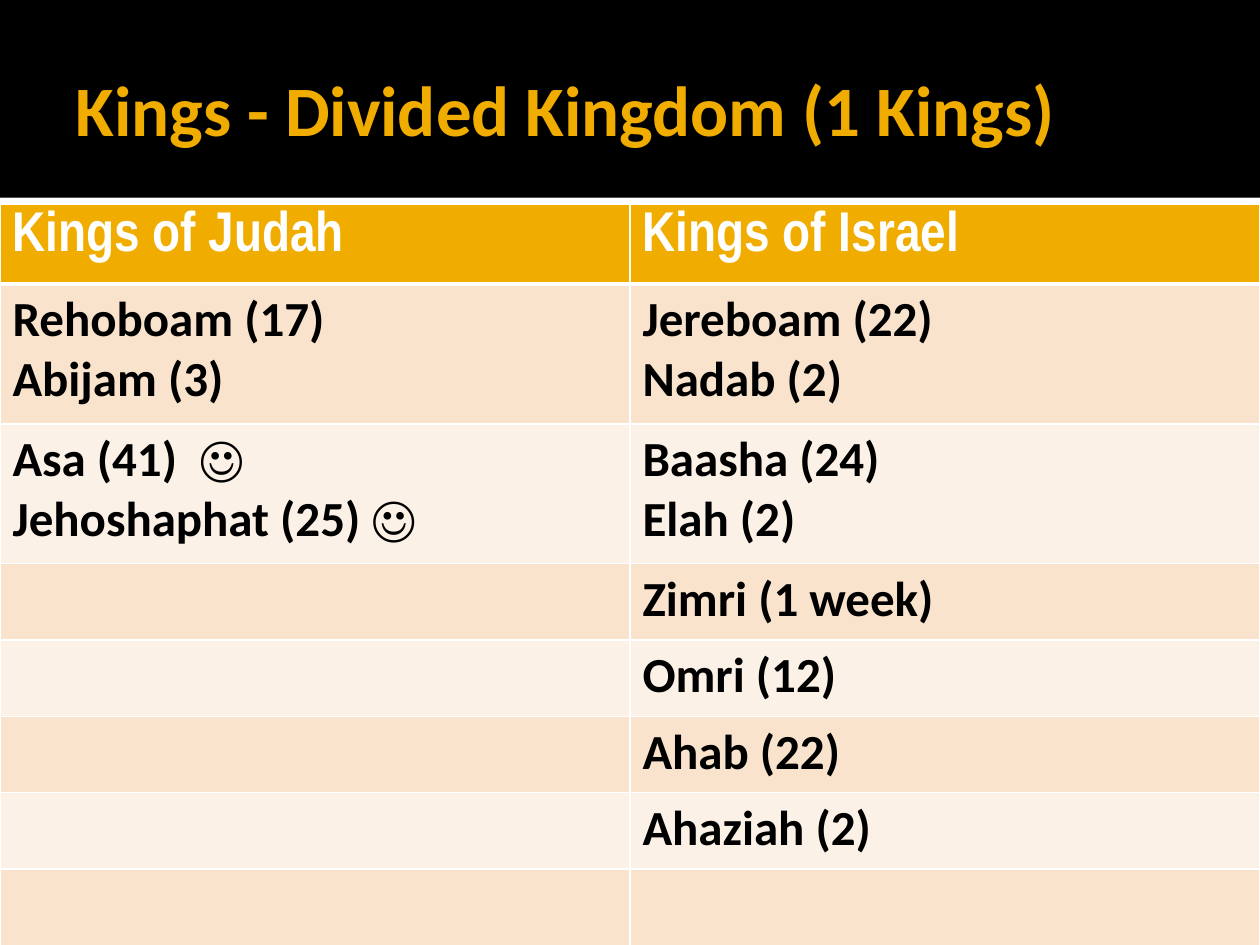
from dataclasses import dataclass

import pptx
import pptx.dml.color
import pptx.enum.shapes
import pptx.enum.text
import pptx.oxml
import pptx.oxml.ns
import pptx.util
from pptx.util import Inches


@dataclass(frozen=True)
class Theme:
    gold: str = "F0AD00"
    black: str = "000000"
    white: str = "FFFFFF"
    bands: tuple[str, str] = ("F9E3CC", "FCF1E7")
    body_font: str = "Calibri"
    header_font: str = "Arial Narrow"
    title_size: float = 40.5
    header_size: float = 32
    body_size: float = 28
    rule_width: float = 1
    header_rule_width: float = 3


@dataclass(frozen=True)
class Reign:
    judah: tuple[str, ...]
    israel: tuple[str, ...]
    height: float


THEME = Theme()
HEADER_HEIGHT, PAIR_HEIGHT = 0.63, 1.11
TABLE_TOP, TABLE_HEIGHT = 1.62, 5.88
SINGLE_HEIGHT = (TABLE_HEIGHT - HEADER_HEIGHT - 2 * PAIR_HEIGHT) / 5

REIGNS = [
    Reign(("Rehoboam (17)", "Abijam (3)"), ("Jereboam (22)", "Nadab (2)"), PAIR_HEIGHT),
    Reign(("Asa (41)  ☺", "Jehoshaphat (25) ☺"), ("Baasha (24)", "Elah (2)"), PAIR_HEIGHT),
    Reign((), ("Zimri (1 week)",), SINGLE_HEIGHT),
    Reign((), ("Omri (12)",), SINGLE_HEIGHT),
    Reign((), ("Ahab (22)",), SINGLE_HEIGHT),
    Reign((), ("Ahaziah (2)",), SINGLE_HEIGHT),
    Reign((), (), SINGLE_HEIGHT),
]


def rgb(color: str) -> pptx.dml.color.RGBColor:
    return pptx.dml.color.RGBColor.from_string(color)


def write(frame, lines: tuple[str, ...], *, size: float, font: str, color: str) -> None:
    """Write each line as a bold paragraph."""
    for index, line in enumerate(lines):
        paragraph = frame.add_paragraph() if index else frame.paragraphs[0]
        run = paragraph.add_run()
        run.text = line
        run.font.size = pptx.util.Pt(size)
        run.font.name = font
        run.font.bold = True
        run.font.color.rgb = rgb(color)


def add_band(slide, top: float, height: float, color: str):
    band = slide.shapes.add_shape(
        pptx.enum.shapes.MSO_SHAPE.RECTANGLE, 0, Inches(top), Inches(10), Inches(height))
    band.shadow.inherit = False
    band.fill.solid()
    band.fill.fore_color.rgb = rgb(color)
    band.line.fill.background()
    return band


def add_soft_shadow(band) -> None:
    effects = band._element.spPr.find(pptx.oxml.ns.qn("a:effectLst"))
    effects.append(pptx.oxml.parse_xml(
        f'<a:outerShdw {pptx.oxml.ns.nsdecls("a")} blurRad="31750" dist="10160" '
        f'dir="5400000" rotWithShape="0"><a:srgbClr val="{THEME.black}">'
        '<a:alpha val="60000"/></a:srgbClr></a:outerShdw>'))


def style_cell(cell, fill: str, top_rule: float, bottom_rule: float) -> None:
    rules = {"lnL": THEME.rule_width, "lnR": THEME.rule_width,
             "lnT": top_rule, "lnB": bottom_rule}
    properties = cell._tc.get_or_add_tcPr()
    for side, width in rules.items():
        properties.append(pptx.oxml.parse_xml(
            f'<a:{side} {pptx.oxml.ns.nsdecls("a")} w="{pptx.util.Pt(width)}">'
            f'<a:solidFill><a:srgbClr val="{THEME.white}"/></a:solidFill></a:{side}>'))
    cell.fill.solid()
    cell.fill.fore_color.rgb = rgb(fill)


def add_title(slide, text: str) -> None:
    title = slide.shapes.add_textbox(Inches(0.5), Inches(0.17), Inches(9), Inches(1.37))
    frame = title.text_frame
    frame.word_wrap = True
    frame.vertical_anchor = pptx.enum.text.MSO_ANCHOR.MIDDLE
    frame.margin_right = Inches(0.05)
    write(frame, (text,), size=THEME.title_size, font=THEME.body_font, color=THEME.gold)


def add_kings_table(slide, reigns: list[Reign]) -> None:
    kings = slide.shapes.add_table(
        len(reigns) + 1, 2, 0, Inches(TABLE_TOP), Inches(10), Inches(TABLE_HEIGHT)).table

    # Header row
    kings.rows[0].height = Inches(HEADER_HEIGHT)
    for column, heading in enumerate(("Kings of Judah", "Kings of Israel")):
        cell = kings.cell(0, column)
        style_cell(cell, THEME.gold, THEME.rule_width, THEME.header_rule_width)
        write(cell.text_frame, (heading,), size=THEME.header_size,
              font=THEME.header_font, color=THEME.white)

    # Reigns in alternating bands
    for row, reign in enumerate(reigns, start=1):
        kings.rows[row].height = Inches(reign.height)
        top_rule = THEME.header_rule_width if row == 1 else THEME.rule_width
        for column, names in enumerate((reign.judah, reign.israel)):
            cell = kings.cell(row, column)
            style_cell(cell, THEME.bands[(row - 1) % 2], top_rule, THEME.rule_width)
            write(cell.text_frame, names, size=THEME.body_size,
                  font=THEME.body_font, color=THEME.black)


def main() -> None:
    deck = pptx.Presentation()
    deck.slide_width, deck.slide_height = Inches(10), Inches(7.5)
    slide = deck.slides.add_slide(deck.slide_layouts[6])
    slide.background.fill.solid()
    slide.background.fill.fore_color.rgb = rgb(THEME.white)

    # Title banner
    add_soft_shadow(add_band(slide, 1.57, 0.05, THEME.white))
    add_band(slide, 0, 1.57, THEME.black)
    add_title(slide, "Kings - Divided Kingdom (1 Kings)")

    # Kings of both kingdoms
    add_kings_table(slide, REIGNS)
    deck.save("out.pptx")


if __name__ == "__main__":
    main()
